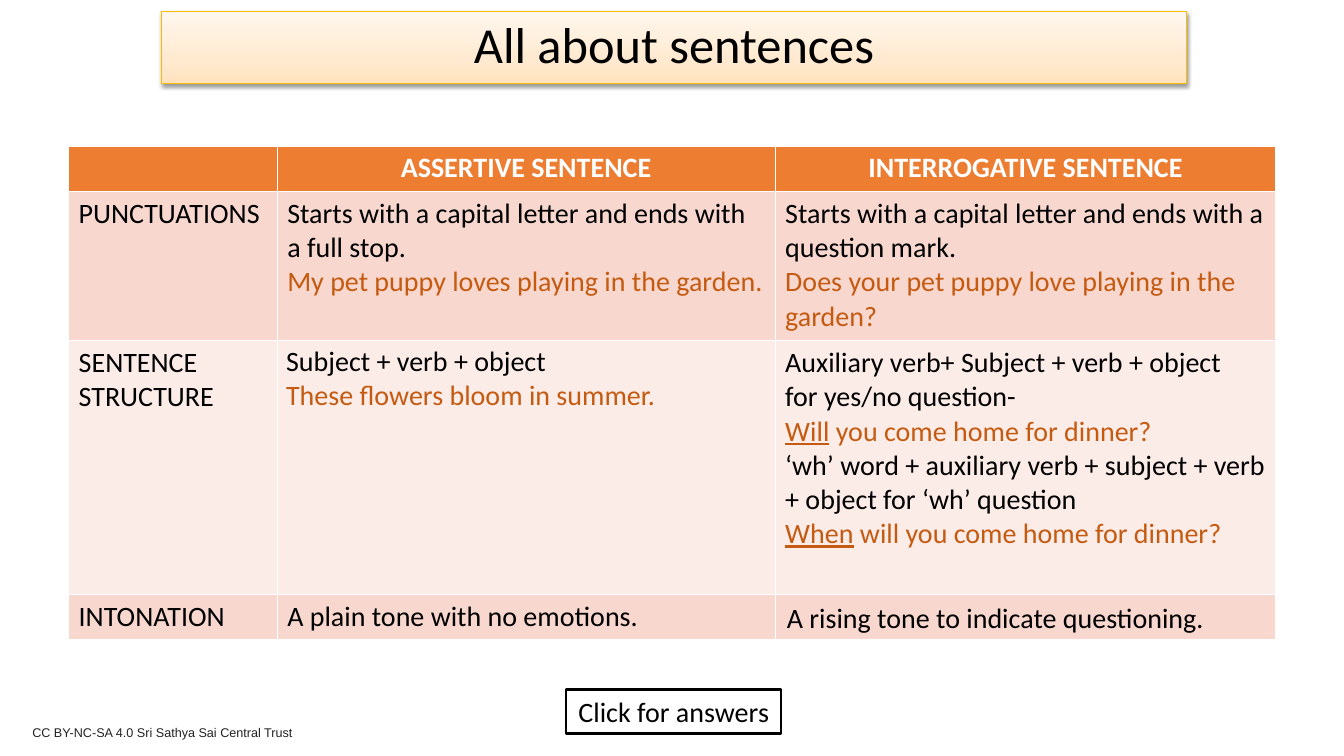
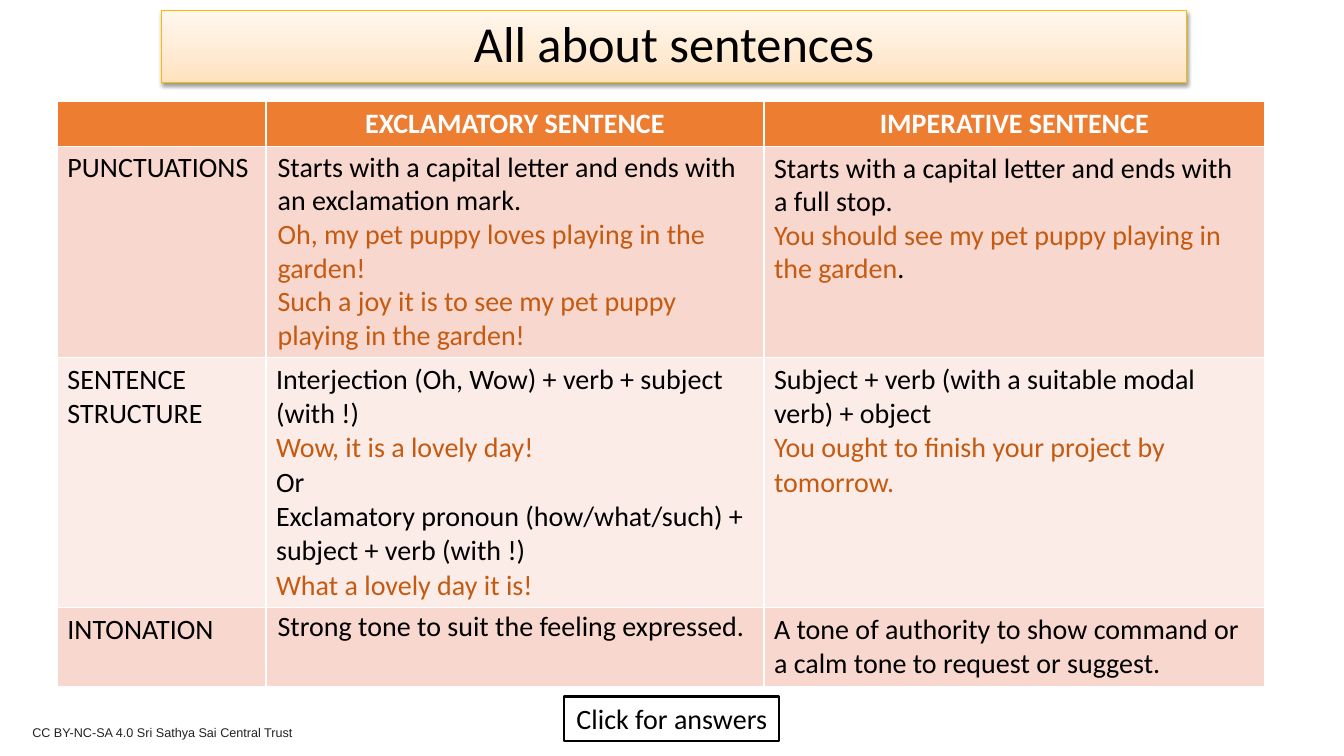
"""Builds two slides that compare four kinds of sentence."""
import lxml.etree
import pptx
import pptx.dml.color
import pptx.enum.shapes
import pptx.enum.text
import pptx.oxml
import pptx.oxml.ns
import pptx.util

Pt = pptx.util.Pt
Color = pptx.dml.color.RGBColor.from_string
CENTER = pptx.enum.text.PP_ALIGN.CENTER
LEFT = pptx.enum.text.PP_ALIGN.LEFT
FIT = pptx.enum.text.MSO_AUTO_SIZE.SHAPE_TO_FIT_TEXT

THEME = {
    "header_fill": "ED7D31",
    "band_fills": ["F8D7CE", "FCECE8"],
    "title_stops": [(0, "FFE2BD"), (35, "FFEAD1"), (100, "FFF7EE")],
    "title_line": "F9BC00",
    "button_line": "000000",
    "styles": {
        "title": ("000000", {"name": "Calibri", "size": Pt(36)}),
        "header": ("FFFFFF", {"name": "Calibri", "size": Pt(20), "bold": True}),
        "rule": ("000000", {"name": "Calibri", "size": Pt(20)}),
        "example": ("C55A11", {"name": "Calibri", "size": Pt(20)}),
        "keyword": ("C55A11", {"name": "Calibri", "size": Pt(20), "underline": True}),
        "footer": ("222222", {"name": "Arial", "size": Pt(9)}),
    },
}
COLUMN_WIDTHS = [149, 355.7, 357.8]
ROW_LABELS = ["PUNCTUATIONS", "SENTENCE STRUCTURE", "INTONATION"]


def write(frame, paragraphs, alignment=LEFT):
    """Fill a text frame with paragraphs made of (style, text) spans."""
    for index, spans in enumerate(paragraphs):
        para = frame.add_paragraph() if index else frame.paragraphs[0]
        para.alignment = alignment
        for style, text in spans:
            span = para.add_run()
            span.text = text
            color, formats = THEME["styles"][style]
            for name, value in formats.items():
                setattr(span.font, name, value)
            span.font.color.rgb = Color(color)


def add_text(page, left, top, width, height, paragraphs):
    """Add a wrapping text box and return it."""
    box = page.shapes.add_textbox(Pt(left), Pt(top), Pt(width), Pt(height))
    box.text_frame.word_wrap = True
    box.text_frame.auto_size = FIT
    write(box.text_frame, paragraphs)
    return box


SLIDES = [
    {
        "title_top": 8,
        "table_at": (49, 104.4),
        "row_heights": [32.4, 106.6, 181.4, 32.4],
        "headers": ["ASSERTIVE SENTENCE", "INTERROGATIVE SENTENCE"],
        "cells": {
            (1, 1): [
                [("rule", "Starts with a capital letter and ends with a full stop.")],
                [("example", "My pet puppy loves playing in the garden.")],
            ],
            (1, 2): [
                [("rule", "Starts with a capital letter and ends with a question mark.")],
                [("example", "Does your pet puppy love playing in the garden?")],
            ],
            (2, 2): [
                [("rule", "Auxiliary verb+ Subject + verb + object")],
                [("rule", "for yes/no question-")],
                [("keyword", "Will"), ("example", " you come home for dinner?")],
                [("rule", "‘wh’ word + auxiliary verb + subject + verb + object for ‘wh’ question")],
                [("keyword", "When"), ("example", " will you come home for dinner?")],
            ],
            (3, 1): [[("rule", "A plain tone with no emotions.")]],
        },
        "answers": [
            ((197.3, 242, 355.7, 55.7), [
                [("rule", "Subject + verb + object")],
                [("example", "These flowers bloom in summer.")],
            ]),
            ((555, 425.5, 338.4, 31.5), [[("rule", "A rising tone to indicate questioning.")]]),
        ],
        "button_at": (404.6, 492.5),
    },
    {
        "title_top": 7.2,
        "table_at": (41, 72.7),
        "row_heights": [31.5, 151, 175, 55],
        "headers": ["EXCLAMATORY SENTENCE", "IMPERATIVE SENTENCE"],
        "cells": {
            (2, 1): [
                [("rule", "Interjection (Oh, Wow) + verb + subject (with !)")],
                [("example", "Wow, it is a lovely day!")],
                [("rule", "Or")],
                [("rule", "Exclamatory pronoun (how/what/such) + subject + verb (with !)")],
                [("example", "What a lovely day it is!")],
            ],
            (2, 2): [
                [("rule", "Subject + verb (with a suitable modal verb) + object")],
                [("example", "You ought to finish your project by tomorrow.")],
            ],
            (3, 2): [
                [("rule", "A tone of authority to show command or a calm tone to request or suggest.")],
            ],
        },
        "answers": [
            ((191.2, 103, 354.2, 152.6), [
                [("rule", "Starts with a capital letter and ends with an exclamation mark.")],
                [("example", "Oh, my pet puppy loves playing in the garden!")],
                [("example", "Such a joy it is to see my pet puppy playing in the garden!")],
            ]),
            ((545.8, 103.7, 354.2, 104.4), [
                [("rule", "Starts with a capital letter and ends with a full stop.")],
                [("example", "You should see my pet puppy playing in the garden"), ("rule", ".")],
            ]),
            ((191.2, 431.3, 354.2, 31.5), [[("rule", "Strong tone to suit the feeling expressed.")]]),
        ],
        "button_at": (403.2, 497.5),
    },
]

deck = pptx.Presentation()
deck.slide_width, deck.slide_height = Pt(960), Pt(540)
layout = deck.slide_layouts.get_by_name("Title Only")

for number, content in enumerate(SLIDES):
    page = deck.slides.add_slide(layout)
    if number == 0:
        credit = [[("footer", "CC BY-NC-SA 4.0 Sri Sathya Sai Central Trust")]]
        footer = add_text(page, 16, 514, 480, 18, credit)
        layout.shapes.element.append(footer.element)

    title = page.shapes.title
    title.left, title.top = Pt(115.5), Pt(content["title_top"])
    title.width, title.height = Pt(732), Pt(52)
    title.text_frame.vertical_anchor = pptx.enum.text.MSO_ANCHOR.MIDDLE
    write(title.text_frame, [[("title", "All about sentences")]], CENTER)
    title.text_frame.paragraphs[0].line_spacing = 0.9
    title.fill.gradient()
    title.fill.gradient_angle = 90
    stops = title.element.spPr.find(".//" + pptx.oxml.ns.qn("a:gsLst"))
    for stop in list(stops):
        stops.remove(stop)
    for position, color in THEME["title_stops"]:
        stop = lxml.etree.SubElement(stops, pptx.oxml.ns.qn("a:gs"), pos=str(position * 1000))
        lxml.etree.SubElement(stop, pptx.oxml.ns.qn("a:srgbClr"), val=color)
    title.line.color.rgb = Color(THEME["title_line"])
    title.line.width = Pt(0.75)
    title.element.spPr.append(pptx.oxml.parse_xml(
        f'<a:effectLst {pptx.oxml.ns.nsdecls("a")}>'
        f'<a:outerShdw blurRad="{Pt(3.1)}" dist="{Pt(1.6)}" dir="5400000" rotWithShape="0">'
        '<a:srgbClr val="000000"><a:alpha val="38000"/></a:srgbClr>'
        '</a:outerShdw></a:effectLst>'))

    heights = content["row_heights"]
    left, top = content["table_at"]
    table = page.shapes.add_table(
        len(heights), len(COLUMN_WIDTHS), Pt(left), Pt(top),
        Pt(sum(COLUMN_WIDTHS)), Pt(sum(heights))).table
    for column, width in zip(table.columns, COLUMN_WIDTHS):
        column.width = Pt(width)
    for row_index, height in enumerate(heights):
        table.rows[row_index].height = Pt(height)
        fill = THEME["band_fills"][(row_index - 1) % 2] if row_index else THEME["header_fill"]
        for cell in table.rows[row_index].cells:
            cell.fill.solid()
            cell.fill.fore_color.rgb = Color(fill)
    for column_index, header in enumerate(content["headers"], 1):
        write(table.cell(0, column_index).text_frame, [[("header", header)]], CENTER)
    for row_index, label in enumerate(ROW_LABELS, 1):
        write(table.cell(row_index, 0).text_frame, [[("rule", label)]])
    for (row_index, column_index), paragraphs in content["cells"].items():
        write(table.cell(row_index, column_index).text_frame, paragraphs)

    for place, paragraphs in content["answers"]:
        add_text(page, *place, paragraphs)

    left, top = content["button_at"]
    button = page.shapes.add_shape(
        pptx.enum.shapes.MSO_SHAPE.RECTANGLE, Pt(left), Pt(top), Pt(153.4), Pt(31.5))
    button.shadow.inherit = False
    button.fill.background()
    button.line.color.rgb = Color(THEME["button_line"])
    button.line.width = Pt(1.5)
    button.text_frame.word_wrap = False
    button.text_frame.auto_size = FIT
    write(button.text_frame, [[("rule", "Click for answers")]], CENTER)

deck.save("out.pptx")
